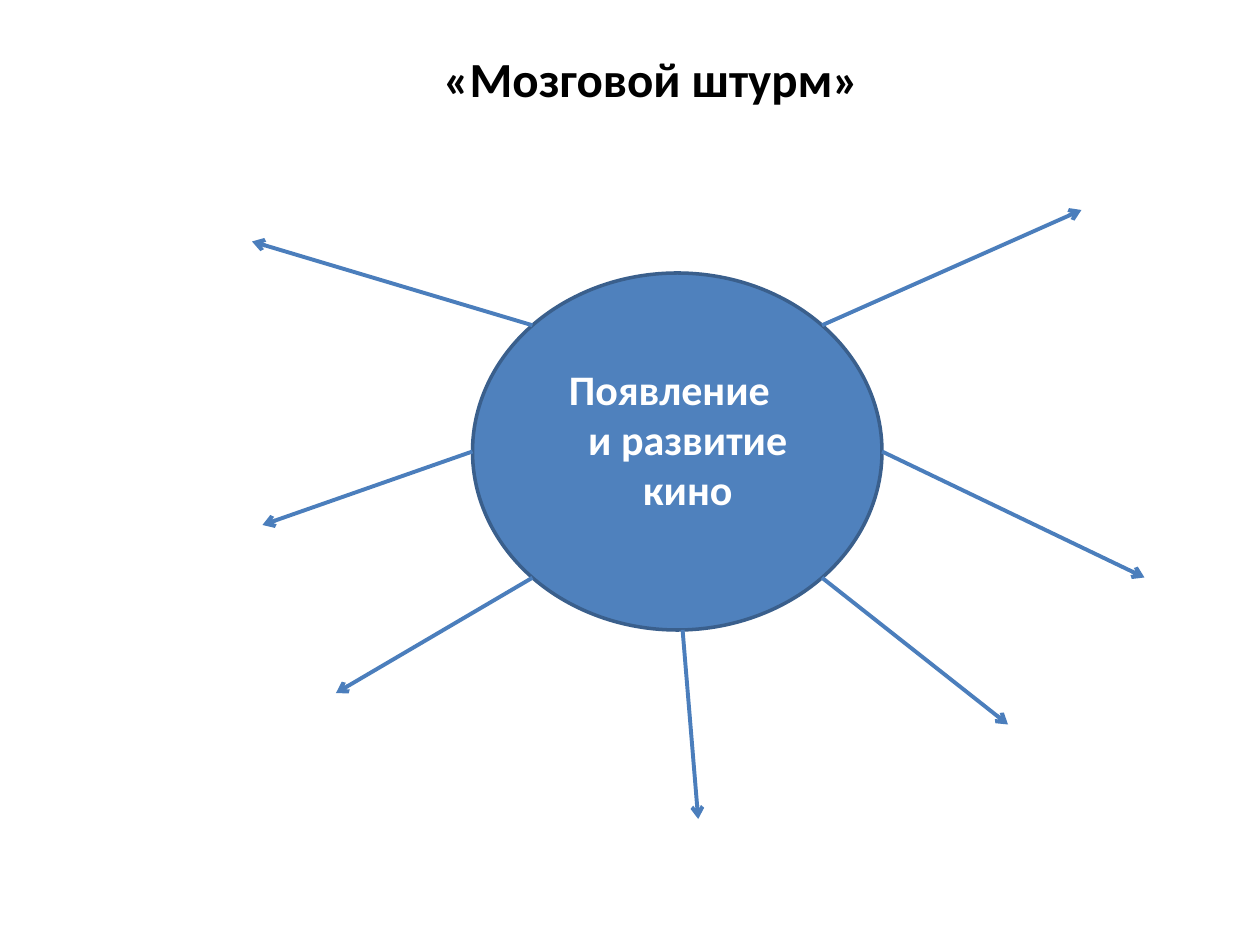
"""Build a brainstorming slide with a central topic and seven outgoing arrows."""
from math import cos, radians, sin

from pptx import Presentation
from pptx.dml.color import RGBColor as RGB
from pptx.enum.shapes import MSO_CONNECTOR as CONN, MSO_SHAPE as SHAPE
from pptx.enum.text import MSO_ANCHOR as ANCHOR, PP_ALIGN as ALIGN
from pptx.oxml.ns import qn
from pptx.util import Pt
from lxml.etree import SubElement

COLORS = {"title": "000000", "fill": "4F81BD", "edge": "3A5F8C",
          "arrow": "4B7EBC", "topic": "FFFFFF"}


def add_text(p, text, align, size, color):
    p.alignment = align
    r = p.add_run()
    r.text = text
    for key, value in {"name": "Calibri", "size": Pt(size), "bold": True}.items():
        setattr(r.font, key, value)
    r.font.color.rgb = RGB.from_string(COLORS[color])


prs = Presentation()
prs.slide_width, prs.slide_height = Pt(720), Pt(540)
s = prs.slides.add_slide(prs.slide_layouts[5])

title = s.shapes.title
box = {"left": 60, "top": 24, "width": 624, "height": 41}
for key, value in box.items():
    setattr(title, key, Pt(value))
title.text_frame.vertical_anchor = ANCHOR.TOP
add_text(title.text_frame.paragraphs[0], "«Мозговой штурм»", ALIGN.CENTER, 28, "title")

cx, cy, rx, ry = 387, 258, 117, 102
sp = s.shapes.add_shape(SHAPE.OVAL, Pt(cx - rx), Pt(cy - ry), Pt(2 * rx), Pt(2 * ry))
sp.shadow.inherit = False
sp.fill.solid()
sp.fill.fore_color.rgb = RGB.from_string(COLORS["fill"])
sp.line.color.rgb = RGB.from_string(COLORS["edge"])
sp.line.width = Pt(2)

tf = s.shapes.add_textbox(Pt(318), Pt(204), Pt(150), Pt(94)).text_frame
tf.word_wrap = True
add_text(tf.paragraphs[0], "Появление", ALIGN.LEFT, 24, "topic")
add_text(tf.add_paragraph(), "и развитие кино", ALIGN.CENTER, 24, "topic")

spokes = [(135, 192, 396), (88.5, 399, 468), (45, 576, 414), (0, 654, 330),
          (180, 150, 300), (225, 144, 138), (315, 618, 120)]
for angle, x, y in spokes:
    a = radians(angle)
    start_x, start_y = cx + rx * cos(a), cy + ry * sin(a)
    line = s.shapes.add_connector(CONN.STRAIGHT, Pt(start_x), Pt(start_y), Pt(x), Pt(y))
    line.line.color.rgb = RGB.from_string(COLORS["arrow"])
    line.line.width = Pt(2.25)
    SubElement(line.line._get_or_add_ln(), qn("a:tailEnd"), type="arrow")
    SubElement(line._element.spPr, qn("a:effectLst"))

prs.save("out.pptx")
